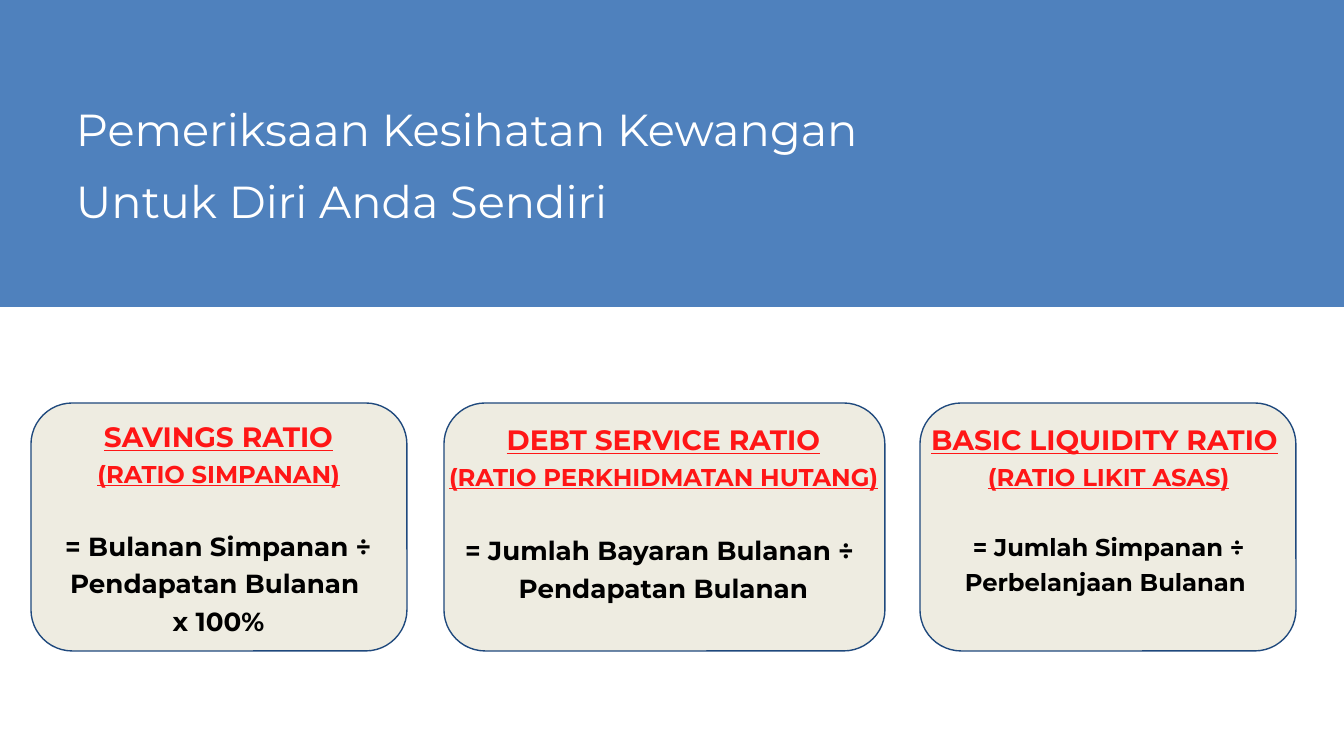
from pptx import Presentation
from pptx.dml.color import RGBColor
from pptx.enum.shapes import MSO_SHAPE
from pptx.enum.text import PP_ALIGN
from pptx.util import Emu, Pt

ROUNDED, RECTANGLE = MSO_SHAPE.ROUNDED_RECTANGLE, MSO_SHAPE.RECTANGLE
LEFT, CENTER = PP_ALIGN.LEFT, PP_ALIGN.CENTER
BLUE = RGBColor(0x4F, 0x81, 0xBD)
NAVY = RGBColor(0x1F, 0x49, 0x7D)
CREAM = RGBColor(0xEE, 0xEC, 0xE1)
RED = RGBColor(0xFF, 0x16, 0x16)
BLACK = RGBColor(0, 0, 0)
WHITE = RGBColor(255, 255, 255)
FONT = "Montserrat"
SLIDE_WIDTH, SLIDE_HEIGHT = 1344, 756
EMU_PER_PX = 9144000 / SLIDE_WIDTH

TITLE = "Pemeriksaan Kesihatan Kewangan Untuk Diri Anda Sendiri"
CARD_TOP, CARD_HEIGHT = 403, 248

# Each card: card span and text span (left, width), text top, formula size, gap
CARDS = [
    {"card": (31, 376), "text": (19, 399), "top": 413, "size": 14, "gap": 19,
     "name": "SAVINGS RATIO", "malay": "(RATIO SIMPANAN)",
     "formula": ["= Bulanan Simpanan ÷ Pendapatan Bulanan ", "x 100%"]},
    {"card": (444, 441), "text": (431, 465), "top": 416, "size": 14, "gap": 20,
     "name": "DEBT SERVICE RATIO", "malay": "(RATIO PERKHIDMATAN HUTANG)",
     "formula": ["= Jumlah Bayaran Bulanan ÷ ", "Pendapatan Bulanan"]},
    {"card": (920, 376), "text": (909, 399), "top": 416, "size": 13, "gap": 19,
     "name": "BASIC LIQUIDITY RATIO ", "malay": "(RATIO LIKIT ASAS)",
     "formula": ["= Jumlah Simpanan ÷ Perbelanjaan Bulanan "]},
]


def px(*lengths):
    return [Emu(round(length * EMU_PER_PX)) for length in lengths]


def add_panel(page, kind, bounds, fill, line=None):
    panel = page.shapes.add_shape(kind, *px(*bounds))
    panel.shadow.inherit = False
    panel.fill.solid()
    panel.fill.fore_color.rgb = fill
    if line is None:
        panel.line.fill.background()
    else:
        panel.line.color.rgb = line
        panel.line.width = Pt(0.75)


def add_text(page, bounds, lines, align, spacing, bold):
    """Each line is (text, size, color, underline, space before)."""
    frame = page.shapes.add_textbox(*px(*bounds)).text_frame
    frame.word_wrap = True
    frame.margin_left = frame.margin_top = 0
    frame.margin_right = frame.margin_bottom = 0
    for index, (text, size, color, underline, before) in enumerate(lines):
        para = frame.add_paragraph() if index else frame.paragraphs[0]
        para.alignment = align
        para.line_spacing = spacing
        para.space_before = Pt(before)
        font = para.font
        font.name, font.size, font.bold = FONT, Pt(size), bold
        font.underline = underline
        font.color.rgb = color
        # Underline only the words, not a closing space
        words = text.rstrip()
        para.add_run().text = words
        if words != text:
            span = para.add_run()
            span.text = " "
            span.font.underline = False


deck = Presentation()
deck.slide_width, deck.slide_height = px(SLIDE_WIDTH, SLIDE_HEIGHT)
page = deck.slides.add_slide(deck.slide_layouts[6])

# Title band
add_panel(page, RECTANGLE, (0, 0, SLIDE_WIDTH, 307), BLUE)
add_text(page, (76, 83, 860, 128), [(TITLE, 24, WHITE, False, 0)], LEFT, 1.34, False)

# Ratio cards
for card in CARDS:
    left, width = card["card"]
    add_panel(page, ROUNDED, (left, CARD_TOP, width, CARD_HEIGHT), CREAM, NAVY)
    lines = [(card["name"], 15, RED, True, 0), (card["malay"], 13, RED, True, 0)]
    for index, text in enumerate(card["formula"]):
        lines.append((text, card["size"], BLACK, False, 0 if index else card["gap"]))
    left, width = card["text"]
    add_text(page, (left, card["top"], width, 222), lines, CENTER, 1.2, True)

deck.save("out.pptx")
